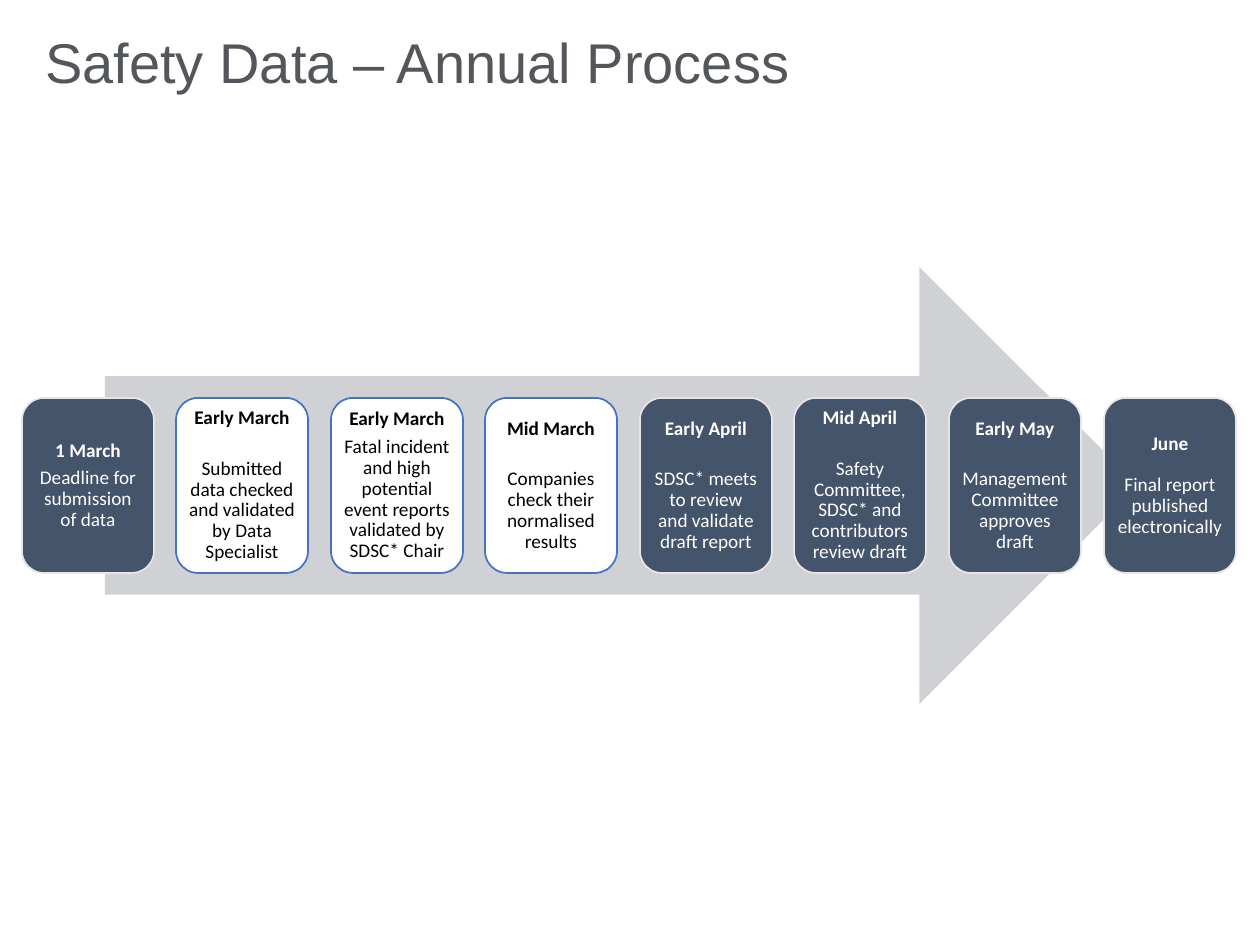
from pptx import Presentation
from pptx.dml.color import RGBColor
from pptx.enum.shapes import MSO_SHAPE
from pptx.enum.text import MSO_ANCHOR, PP_ALIGN
from pptx.util import Emu, Pt

PX = 914400 // 126
COLORS = {
    "title": "53565A", "arrow": "CFD1D4", "navy": "44546A", "pale": "E7E6E6",
    "blue": "4472C4", "white": "FFFFFF", "black": "000000",
}
# style: fill, line, text
STYLES = {"dark": ("navy", "pale", "white"), "light": ("white", "blue", "black")}

TITLE = "Safety Data – Annual Process"
# date, task, style, points between date and task
STEPS = [
    ("1 March", "Deadline for submission of data", "dark", 4),
    ("Early March", "Submitted data checked and validated by Data Specialist", "light", 17),
    ("Early March", "Fatal incident and high potential event reports validated by SDSC* Chair",
     "light", 4),
    ("Mid March", "Companies check their normalised results", "light", 17),
    ("Early April", "SDSC* meets to review and validate draft report", "dark", 17),
    ("Mid April", "Safety Committee, SDSC* and contributors review draft", "dark", 17),
    ("Early May", "Management Committee approves draft", "dark", 17),
    ("June", "Final report published electronically", "dark", 12),
]
TITLE_BOX = (33, 29, 1193, 166)
ARROW_BOX = (105, 267, 1033, 437)
FIRST_LEFT, LAST_LEFT = 22, 1104
STEP_TOP, STEP_WIDTH, STEP_HEIGHT = 398, 132, 175
STEP_INSET = 6


def px(*values):
    return [Emu(v * PX) for v in values]


def rgb(name):
    return RGBColor.from_string(COLORS[name])


def set_font(font, name, size, color, bold=False):
    font.name, font.size, font.bold = name, Pt(size), bold
    font.color.rgb = rgb(color)


def add_shape(slide, kind, box, fill, line=None):
    s = slide.shapes.add_shape(kind, *px(*box))
    s.shadow.inherit = False
    s.fill.solid()
    s.fill.fore_color.rgb = rgb(fill)
    if line:
        s.line.color.rgb = rgb(line)
        s.line.width = Pt(1)
    else:
        s.line.fill.background()
    return s


def add_title(slide):
    tf = slide.shapes.add_textbox(*px(*TITLE_BOX)).text_frame
    tf.word_wrap = True
    tf.text = TITLE
    p = tf.paragraphs[0]
    p.line_spacing = 0.9
    set_font(p.runs[0].font, "Arial", 32, "title")


def add_step(slide, left, date, task, style, gap):
    fill, line, color = STYLES[style]
    box = (left, STEP_TOP, STEP_WIDTH, STEP_HEIGHT)
    tf = add_shape(slide, MSO_SHAPE.ROUNDED_RECTANGLE, box, fill, line).text_frame
    tf.word_wrap = True
    tf.vertical_anchor = MSO_ANCHOR.MIDDLE
    tf.margin_left, tf.margin_top, tf.margin_right, tf.margin_bottom = px(*[STEP_INSET] * 4)
    tf.text = f"{date}\n{task}"
    for p, bold in zip(tf.paragraphs, (True, False)):
        p.alignment = PP_ALIGN.CENTER
        p.line_spacing = 0.9
        set_font(p.runs[0].font, "Calibri", 11, color, bold)
    tf.paragraphs[0].space_after = Pt(gap)


def main():
    prs = Presentation()
    prs.slide_width, prs.slide_height = px(1260, 945)
    slide = prs.slides.add_slide(prs.slide_layouts[6])
    add_title(slide)
    add_shape(slide, MSO_SHAPE.RIGHT_ARROW, ARROW_BOX, "arrow")
    for i, step in enumerate(STEPS):
        left = FIRST_LEFT + i * (LAST_LEFT - FIRST_LEFT) // (len(STEPS) - 1)
        add_step(slide, left, *step)
    prs.save("out.pptx")


if __name__ == "__main__":
    main()
